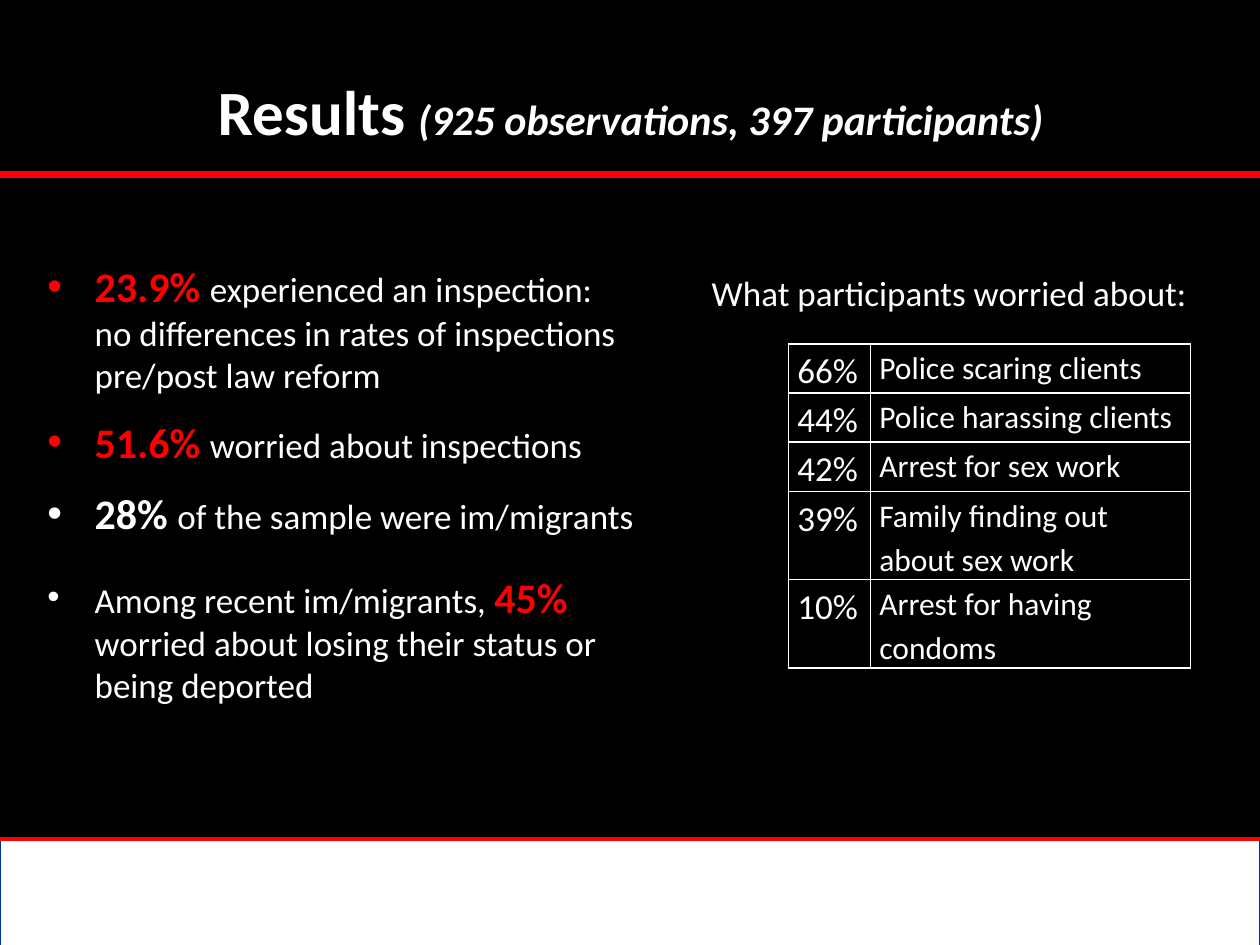
from dataclasses import dataclass

from lxml import etree
from pptx import Presentation
from pptx import util as u
from pptx.dml.color import RGBColor
from pptx.enum import shapes, text
from pptx.oxml import ns


@dataclass(frozen=True)
class Theme:
    font: str = "Calibri"
    black: str = "000000"
    white: str = "FFFFFF"
    red: str = "FF0000"
    blue: str = "003099"
    title: int = 36
    gap: int = 32
    strong: int = 24
    body: int = 20
    label: int = 18


def add_xml(parent, tag, **attributes):
    return etree.SubElement(parent, ns.qn(tag), **attributes)


class SlideBuilder:
    def __init__(self, presentation, theme):
        self.theme = theme
        self.slide = presentation.slides.add_slide(presentation.slide_layouts[6])
        fill = self.slide.background.fill
        fill.solid()
        fill.fore_color.rgb = RGBColor.from_string(theme.black)

    def line(self, y, width, color):
        connector = self.slide.shapes.add_connector(
            shapes.MSO_CONNECTOR.STRAIGHT, 0, u.Pt(y), u.Pt(720), u.Pt(y))
        connector.line.color.rgb = RGBColor.from_string(color)
        connector.line.width = u.Pt(width)
        add_xml(connector._element.spPr, "a:effectLst")

    def rectangle(self, box, fill, outline):
        shape = self.slide.shapes.add_shape(
            shapes.MSO_SHAPE.RECTANGLE, *map(u.Pt, box))
        shape.shadow.inherit = False
        shape.fill.solid()
        shape.fill.fore_color.rgb = RGBColor.from_string(fill)
        shape.line.color.rgb = RGBColor.from_string(outline)
        shape.line.width = u.Pt(0.75)

    def format_run(self, run, size, color=None, bold=False, italic=False):
        run.font.name = self.theme.font
        run.font.size = u.Pt(size)
        run.font.bold = bold
        run.font.italic = italic
        run.font.color.rgb = RGBColor.from_string(color or self.theme.white)

    def bullet(self, paragraph, indent=27):
        properties = paragraph._p.get_or_add_pPr()
        properties.set("marL", str(u.Pt(indent)))
        properties.set("indent", str(-u.Pt(indent)))
        add_xml(properties, "a:buFont", typeface="Arial")
        add_xml(properties, "a:buChar", char="•")

    def text_box(self, box, paragraphs, align=text.PP_ALIGN.LEFT,
                 anchor=text.MSO_ANCHOR.TOP, after=12, before_last=0, bullets=False):
        frame = self.slide.shapes.add_textbox(*map(u.Pt, box)).text_frame
        frame.word_wrap = True
        frame.vertical_anchor = anchor
        for index, pieces in enumerate(paragraphs):
            paragraph = frame.add_paragraph() if index else frame.paragraphs[0]
            if bullets:
                self.bullet(paragraph)
            paragraph.alignment = align
            paragraph.space_after = u.Pt(after)
            if index and index == len(paragraphs) - 1:
                paragraph.space_before = u.Pt(before_last)
            for words, *style in pieces:
                if words == "\n":
                    paragraph.add_line_break()
                    continue
                run = paragraph.add_run()
                run.text = words
                self.format_run(run, *style)

    def border(self, cell):
        properties = cell._tc.get_or_add_tcPr()
        for index, side in enumerate(("a:lnL", "a:lnR", "a:lnT", "a:lnB")):
            line = add_xml(properties, side, w=str(u.Pt(1)))
            fill = add_xml(line, "a:solidFill")
            add_xml(fill, "a:srgbClr", val=self.theme.white)
            properties.insert(index, line)

    def table(self, left, top, widths, heights, rows, sizes):
        table = self.slide.shapes.add_table(
            len(rows), len(widths), u.Pt(left), u.Pt(top),
            u.Pt(sum(widths)), u.Pt(sum(heights))).table
        table.first_row = table.horz_banding = False
        for column, width in zip(table.columns, widths):
            column.width = u.Pt(width)
        for row, height, values in zip(table.rows, heights, rows):
            row.height = u.Pt(height)
            for cell, value, size in zip(row.cells, values, sizes):
                cell.fill.background()
                self.border(cell)
                cell.margin_left = cell.margin_right = u.Pt(5)
                cell.margin_top = cell.margin_bottom = 0
                paragraph = cell.text_frame.paragraphs[0]
                paragraph.text = value
                paragraph.line_spacing = 1.15
                self.format_run(paragraph.runs[0], size)


def main():
    presentation = Presentation()
    presentation.slide_width = u.Pt(720)
    presentation.slide_height = u.Pt(540)
    theme = Theme()
    builder = SlideBuilder(presentation, theme)

    footer_top = 479.5
    builder.line(100, 4, theme.red)
    builder.rectangle((0, footer_top, 720, 62.5), theme.white, theme.blue)
    builder.line(footer_top, 2.25, theme.red)

    builder.text_box(
        (14.4, 18, 692, 90),
        [[("Results", theme.title, theme.white, True),
          (" ", theme.gap, theme.white, True),
          ("(925 observations, 397 participants)", theme.strong, theme.white, True, True)]],
        align=text.PP_ALIGN.CENTER, anchor=text.MSO_ANCHOR.MIDDLE, after=6)
    builder.text_box((399.6, 151.5, 303, 34),
                     [[("What participants worried about:", theme.body)]])

    findings = [
        [("23.9% ", theme.strong, theme.red, True),
         ("experienced an inspection:", theme.body),
         ("\n",),
         ("no differences in rates of inspections pre/post law reform", theme.body)],
        [("51.6% ", theme.strong, theme.red, True),
         ("worried about inspections", theme.body)],
        [("28% ", theme.strong, theme.white, True),
         ("of the sample were im/migrants", theme.body)],
        [("Among recent im/migrants, ", theme.body),
         ("45% ", theme.strong, theme.red, True),
         ("worried about losing their status or being deported", theme.body)],
    ]
    builder.text_box((20, 145.5, 351.5, 317.5), findings, before_last=7, bullets=True)

    worries = [
        ("66%", "Police scaring clients"),
        ("44%", "Police harassing clients"),
        ("42%", "Arrest for sex work"),
        ("39%", "Family finding out about sex work"),
        ("10%", "Arrest for having condoms"),
    ]
    one_line, two_lines = 28.1, 50.5
    builder.table(450.7, 196.5, (46.8, 182.7), [one_line] * 3 + [two_lines] * 2,
                  worries, (theme.body, theme.label))

    presentation.save("out.pptx")


if __name__ == "__main__":
    main()
